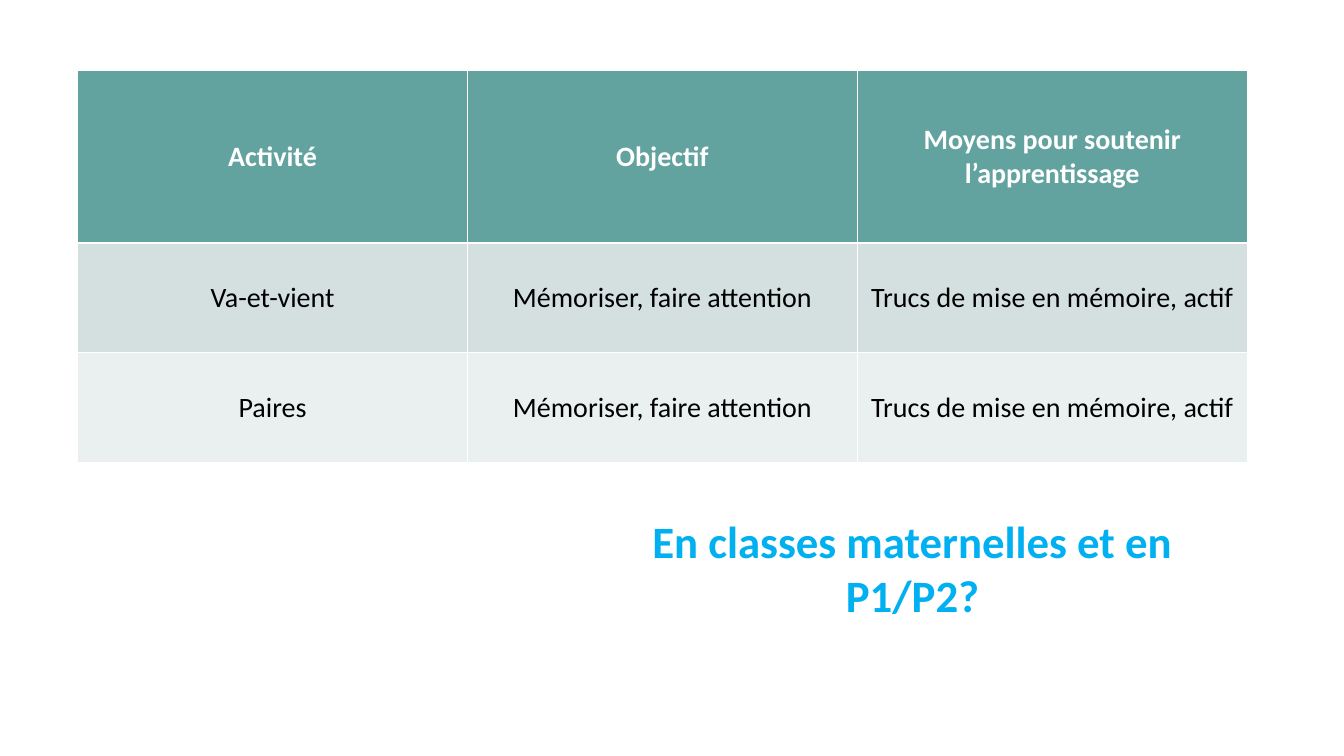
from pptx import Presentation
from pptx.dml.color import RGBColor
from pptx.enum.text import MSO_ANCHOR, PP_ALIGN
from pptx.util import Inches, Pt

FONT = "Calibri"
WHITE = RGBColor(0xFF, 0xFF, 0xFF)
BLACK = RGBColor(0x00, 0x00, 0x00)
TEAL = RGBColor(0x62, 0xA3, 0x9F)
PALE_TEAL = RGBColor(0xD3, 0xE0, 0xDF)
MIST = RGBColor(0xEA, 0xF0, 0xF0)
SKY_BLUE = RGBColor(0x00, 0xB0, 0xF0)

GOAL = "Mémoriser, faire attention"
SUPPORT = "Trucs de mise en mémoire, actif"
# Each row: height in inches, fill, text colour, bold, cell texts
ACTIVITY_ROWS = [
    (1.71, TEAL, WHITE, True,
     ["Activité", "Objectif", "Moyens pour soutenir l’apprentissage"]),
    (1.09, PALE_TEAL, BLACK, False, ["Va-et-vient", GOAL, SUPPORT]),
    (1.09, MIST, BLACK, False, ["Paires", GOAL, SUPPORT]),
]


def style_text(text_frame, size, color, bold):
    paragraph = text_frame.paragraphs[0]
    paragraph.alignment = PP_ALIGN.CENTER
    font = paragraph.runs[0].font
    font.name = FONT
    font.size = Pt(size)
    font.bold = bold
    font.color.rgb = color


def add_activity_table(slide, left, top, width, height):
    column_count = len(ACTIVITY_ROWS[0][-1])
    activities = slide.shapes.add_table(
        len(ACTIVITY_ROWS), column_count,
        Inches(left), Inches(top), Inches(width), Inches(height)).table
    for column in activities.columns:
        column.width = Inches(width / column_count)
    for row, (row_height, fill, color, bold, texts) in zip(activities.rows, ACTIVITY_ROWS):
        row.height = Inches(row_height)
        for cell, text in zip(row.cells, texts):
            cell.text_frame.text = text
            cell.vertical_anchor = MSO_ANCHOR.MIDDLE
            cell.margin_left = cell.margin_right = Inches(0.13)
            cell.margin_top = cell.margin_bottom = Inches(0.07)
            cell.fill.solid()
            cell.fill.fore_color.rgb = fill
            style_text(cell.text_frame, 20, color, bold)


def add_question(slide, left, top, width, height):
    question = slide.shapes.add_textbox(
        Inches(left), Inches(top), Inches(width), Inches(height)).text_frame
    question.word_wrap = True
    question.text = "En classes maternelles et en P1/P2?"
    style_text(question, 32, SKY_BLUE, True)


def main():
    presentation = Presentation()
    presentation.slide_width = Inches(13.33)
    presentation.slide_height = Inches(7.5)
    slide = presentation.slides.add_slide(presentation.slide_layouts[6])
    add_question(slide, 6.09, 5.05, 5.92, 1.18)
    add_activity_table(slide, 0.77, 0.7, 11.6, 3.89)
    presentation.save("out.pptx")


if __name__ == "__main__":
    main()
